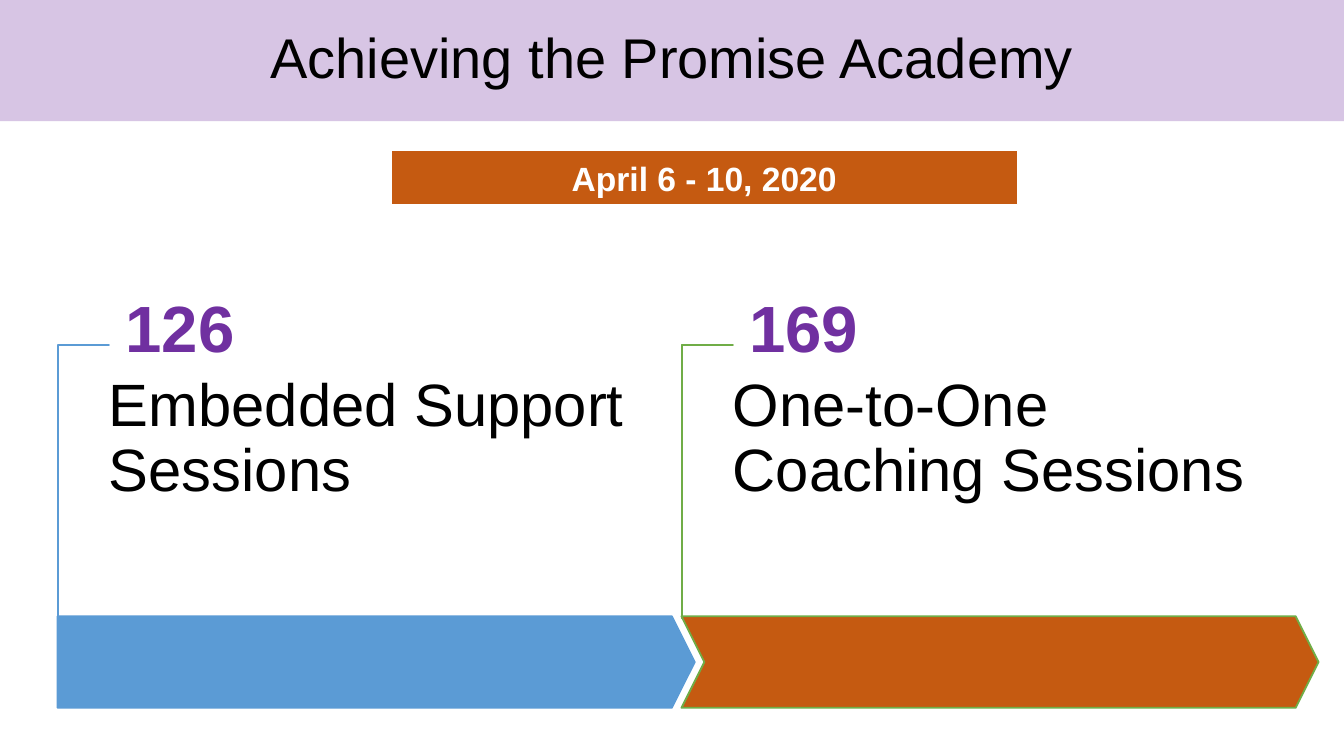
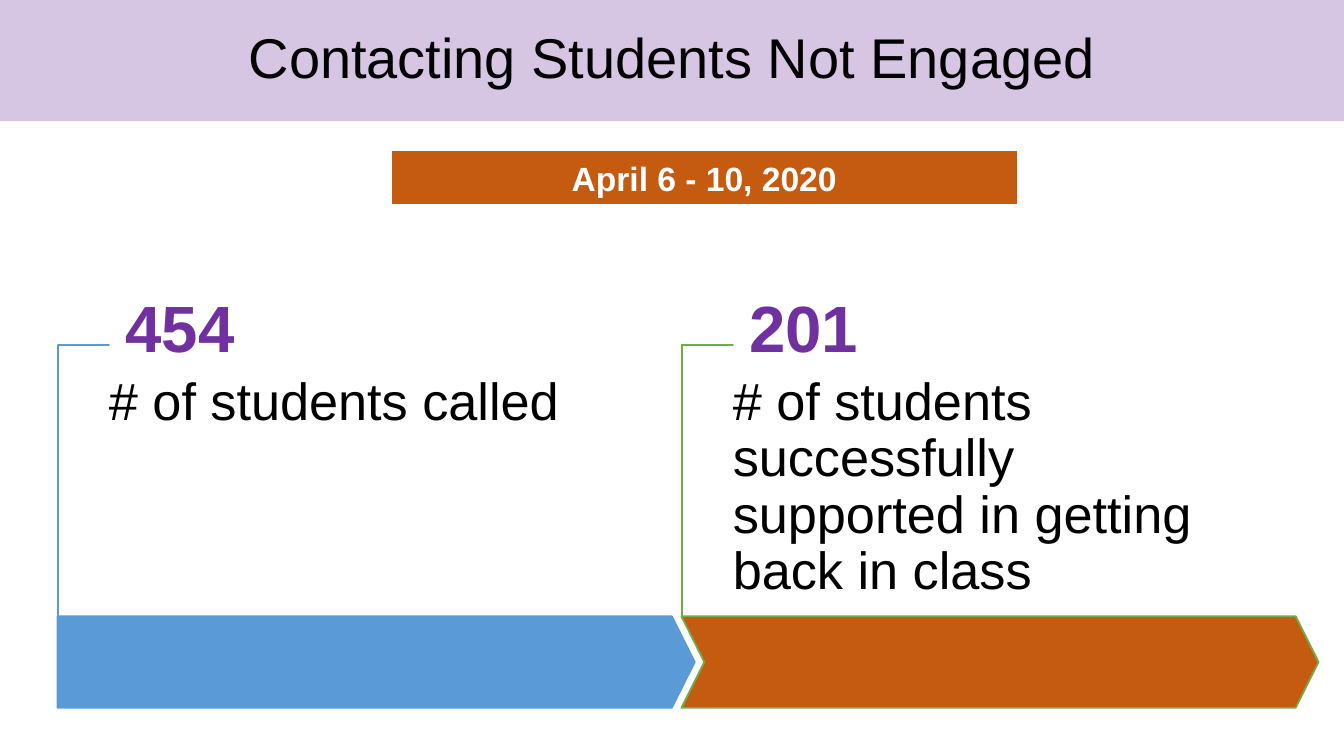
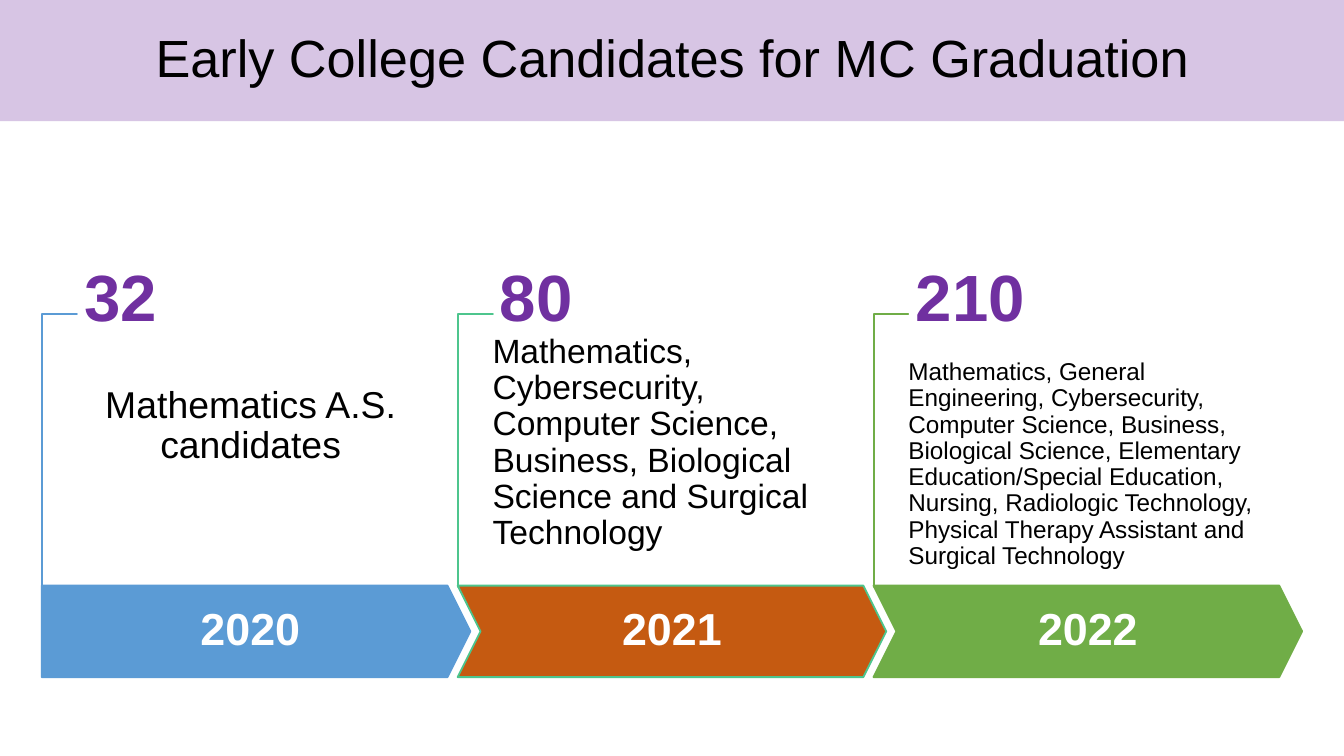
import pptx
import pptx.util
import pptx.dml.color
import pptx.enum.shapes
import pptx.enum.text
import pptx.oxml
import pptx.oxml.ns
from dataclasses import dataclass

Cm, Pt = pptx.util.Cm, pptx.util.Pt
SHAPE = pptx.enum.shapes.MSO_SHAPE
ALIGN = pptx.enum.text.PP_ALIGN
ANCHOR = pptx.enum.text.MSO_ANCHOR
AUTOSIZE = pptx.enum.text.MSO_AUTO_SIZE

# Shared style
FONT = "Arial"
COLORS = {
    "purple": "7030A0",
    "orange": "C55A11",
    "blue": "5B9BD5",
    "green": "70AD47",
    "mint": "4DC58D",
    "black": "000000",
    "white": "FFFFFF",
}
SLIDE_W, SLIDE_H = 25.4, 14.29
BAND_H = 2.29
ARROW_H = 1.73
BRACKET_H = 5.16
WEEK = "April 6 - 10, 2020"


@dataclass
class Timeline:
    """Measures of a row of steps, in centimetres."""
    left: float
    pitch: float
    arrow_w: float
    arrow_y: float
    bracket_w: float
    bracket_y: float
    text_y: float
    text_w: float
    text_h: float
    number_dx: float
    number_y: float


@dataclass
class Step:
    number: str
    number_w: float
    text: str
    size: int
    fill: str
    line: str
    label: str = ""
    align: ALIGN = ALIGN.LEFT
    text_drop: float = 0


TWO_STEPS = Timeline(1.09, 11.79, 12.04, 11.65, 0.97, 6.52,
                     7.09, 9.78, 3.43, 1.03, 5.31)
THREE_STEPS = Timeline(0.79, 7.86, 8.1, 11.07, 0.66, 5.93,
                       6.32, 6.58, 3.61, 0.55, 4.72)


def rgb(name):
    return pptx.dml.color.RGBColor.from_string(COLORS[name])


def set_text(sp, text, size, color, bold=False, align=ALIGN.LEFT, spacing=None):
    tf = sp.text_frame
    tf.word_wrap = True
    tf.text = text
    p = tf.paragraphs[0]
    p.alignment = align
    if spacing:
        p.line_spacing = spacing
    for r in p.runs:
        r.font.name = FONT
        r.font.size = Pt(size)
        r.font.bold = bold
        r.font.color.rgb = rgb(color)
    return tf


def set_insets(tf, left=0, top=0, right=0, bottom=0):
    tf.margin_left, tf.margin_top = Cm(left), Cm(top)
    tf.margin_right, tf.margin_bottom = Cm(right), Cm(bottom)


def add_box(s, x, y, w, h):
    return s.shapes.add_textbox(Cm(x), Cm(y), Cm(w), Cm(h))


def add_shape(s, kind, x, y, w, h, fill, line, line_w=1):
    sp = s.shapes.add_shape(kind, Cm(x), Cm(y), Cm(w), Cm(h))
    sp.shadow.inherit = False
    sp.fill.solid()
    sp.fill.fore_color.rgb = rgb(fill)
    sp.line.color.rgb = rgb(line)
    sp.line.width = Pt(line_w)
    return sp


def add_titled_slide(prs, title, size=30):
    s = prs.slides.add_slide(prs.slide_layouts[5])
    s.background.fill.solid()
    s.background.fill.fore_color.rgb = rgb("white")
    # Title on a translucent band
    sp = s.shapes.title
    sp.left, sp.top = Cm(0), Cm(0)
    sp.width, sp.height = Cm(SLIDE_W), Cm(BAND_H)
    sp.fill.solid()
    sp.fill.fore_color.rgb = rgb("purple")
    clr = sp._element.spPr.find(".//" + pptx.oxml.ns.qn("a:srgbClr"))
    clr.append(pptx.oxml.parse_xml(
        f'<a:alpha {pptx.oxml.ns.nsdecls("a")} val="28000"/>'))
    tf = set_text(sp, title, size, "black", align=ALIGN.CENTER, spacing=0.9)
    tf.auto_size = AUTOSIZE.NONE
    tf.vertical_anchor = ANCHOR.MIDDLE
    return s


def add_date_banner(s, text):
    sp = add_shape(s, SHAPE.RECTANGLE, 7.39, 2.85, 11.84, 1.02,
                   "orange", "white", 0.75)
    tf = set_text(sp, text, 18, "white", True, ALIGN.CENTER)
    tf.auto_size = AUTOSIZE.SHAPE_TO_FIT_TEXT


def add_bracket(s, x, y, w, h, line):
    # A quarter turn swaps width and height about the centre
    sp = add_shape(s, SHAPE.RECTANGLE, x + (w - h) / 2, y + (h - w) / 2, h, w,
                   "white", line)
    sp.rotation = 90
    # The corner preset has no member in MSO_SHAPE
    geom = sp._element.spPr.find(pptx.oxml.ns.qn("a:prstGeom"))
    geom.set("prst", "corner")
    guides = geom.find(pptx.oxml.ns.qn("a:avLst"))
    for name in ("adj1", "adj2"):
        guides.append(pptx.oxml.parse_xml(
            f'<a:gd {pptx.oxml.ns.nsdecls("a")} name="{name}" fmla="val 1000"/>'))


def add_arrow(s, kind, x, y, w, step):
    sp = add_shape(s, kind, x, y, w, ARROW_H, step.fill, step.line)
    sp.adjustments[0] = 0.25
    if step.label:
        tf = set_text(sp, step.label, 24, "white", True, ALIGN.CENTER, 0.9)
        set_insets(tf, left=0.43, right=0.43)
        tf.vertical_anchor = ANCHOR.MIDDLE


def add_number(s, x, y, w, text):
    tf = set_text(add_box(s, x, y, w, 1.75), text, 35, "purple", True)
    tf.auto_size = AUTOSIZE.SHAPE_TO_FIT_TEXT


def add_timeline(s, t, steps):
    for i, step in enumerate(steps):
        x = t.left + i * t.pitch
        add_bracket(s, x, t.bracket_y, t.bracket_w, BRACKET_H, step.line)
        kind = SHAPE.CHEVRON if i else SHAPE.PENTAGON
        add_arrow(s, kind, x, t.arrow_y, t.arrow_w, step)
        sp = add_box(s, x + t.bracket_w, t.text_y, t.text_w, t.text_h)
        tf = set_text(sp, step.text, step.size, "black",
                      align=step.align, spacing=0.9)
        set_insets(tf, top=step.text_drop)
        add_number(s, x + t.number_dx, t.number_y, step.number_w, step.number)


def main():
    prs = pptx.Presentation()
    prs.slide_width, prs.slide_height = Cm(SLIDE_W), Cm(SLIDE_H)

    # Weekly counts
    s = add_titled_slide(prs, "Achieving the Promise Academy")
    add_timeline(s, TWO_STEPS, [
        Step("126", 3.61, "Embedded Support Sessions", 32, "blue", "blue"),
        Step("169", 4.72, "One-to-One Coaching Sessions", 32, "orange", "green"),
    ])
    add_date_banner(s, WEEK)

    s = add_titled_slide(prs, "Contacting Students Not Engaged")
    add_timeline(s, TWO_STEPS, [
        Step("454", 3.61, "# of students called", 28, "blue", "blue"),
        Step("201", 4.72, "# of students successfully supported in getting "
             "back in class", 28, "orange", "green"),
    ])
    add_date_banner(s, WEEK)

    # Candidates by year
    s = add_titled_slide(prs, "Early College Candidates for MC Graduation", 28)
    add_timeline(s, THREE_STEPS, [
        Step("32", 1.96, "Mathematics A.S. candidates", 20, "blue", "blue",
             "2020", ALIGN.CENTER, 0.98),
        Step("80", 2.31, "Mathematics, Cybersecurity, Computer Science, "
             "Business, Biological Science and Surgical Technology",
             18, "orange", "mint", "2021"),
        Step("210", 2.92, "Mathematics, General Engineering, Cybersecurity, "
             "Computer Science, Business, Biological Science, Elementary "
             "Education/Special Education, Nursing, Radiologic Technology, "
             "Physical Therapy Assistant and Surgical Technology",
             13, "green", "green", "2022", text_drop=0.48),
    ])

    prs.save("out.pptx")


if __name__ == "__main__":
    main()
